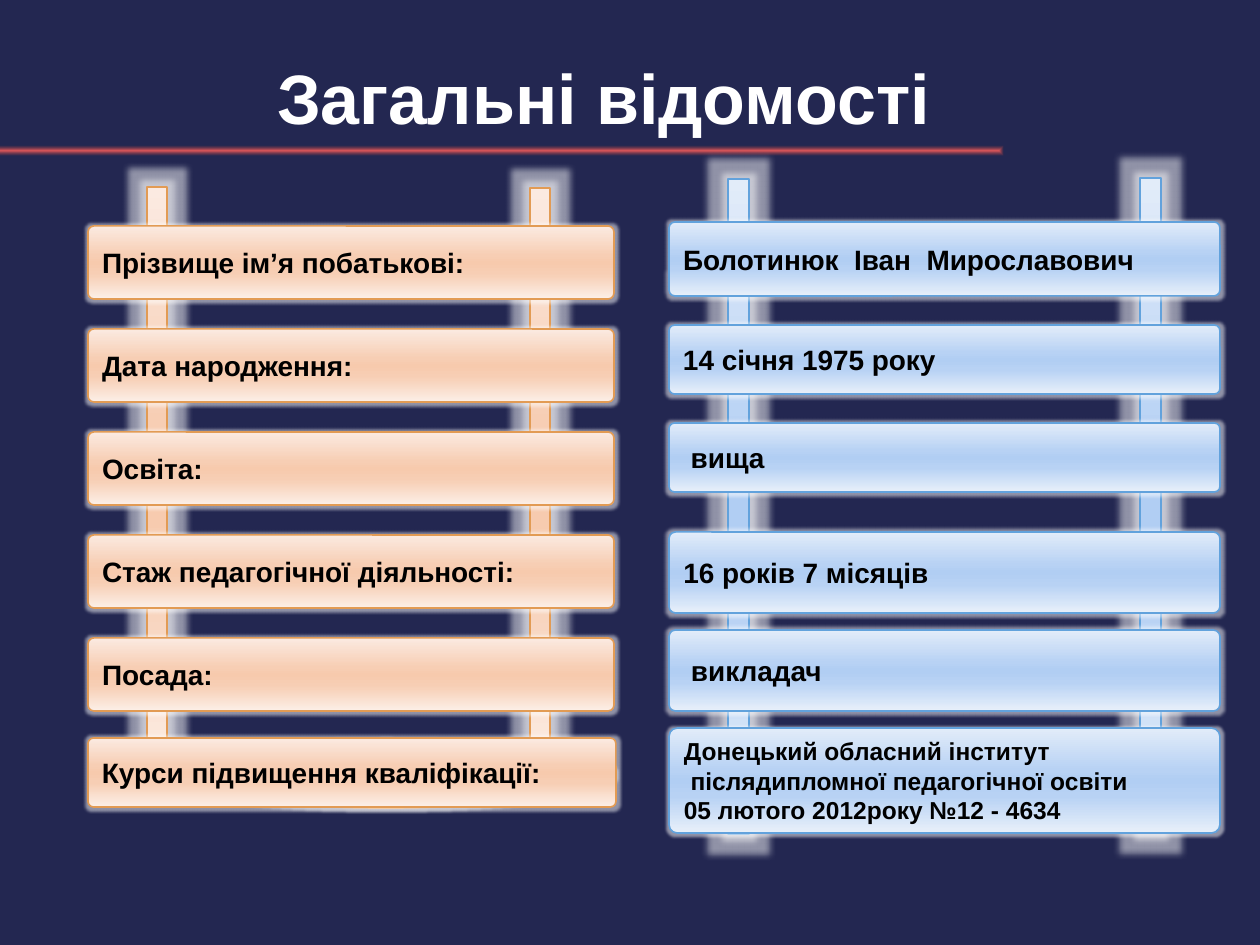
from dataclasses import dataclass

from lxml import etree
from pptx import Presentation
from pptx.dml.color import RGBColor
from pptx.enum import shapes, text
from pptx.util import Emu, Pt

NS = "http://schemas.openxmlformats.org/drawingml/2006/main"
SCALE = 914400 / 126
KIND = shapes.MSO_SHAPE


@dataclass
class Theme:
    stops: list[tuple[int, str]]
    line: str


@dataclass
class Card:
    left: int
    top: int
    width: int
    height: int
    lines: list[str]
    size: int = 16


ORANGE = Theme([(0, "FBEAE1"), (40, "F7CEB4"), (50, "F7CAAD"),
                (65, "F7CEB4"), (100, "FCEFE7")], "E29B54")
BLUE = Theme([(0, "E2ECF9"), (40, "B8D2F4"), (50, "B1CEF3"),
              (65, "B8D2F4"), (100, "E8F0FA")], "62A2DC")

LABELS = ["Прізвище ім’я побатькові:", "Дата народження:", "Освіта:",
          "Стаж педагогічної діяльності:", "Посада:"]
FACTS = [
    (222, 74, "Болотинюк  Іван  Мирославович"),
    (325, 69, "14 січня 1975 року"),
    (423, 69, " вища"),
    (532, 81, "16 років 7 місяців"),
    (630, 81, " викладач"),
]
COURSE = ["Донецький обласний інститут",
          " післядипломної педагогічної освіти",
          "05 лютого 2012року №12 - 4634"]


def px(n: int) -> Emu:
    return Emu(round(n * SCALE))


def color(code: str) -> RGBColor:
    return RGBColor.from_string(code)


def grade(shape, stops: str, way: str) -> None:
    shape._element.spPr.insert(2, etree.fromstring(
        f'<a:gradFill xmlns:a="{NS}" rotWithShape="1">'
        f'<a:gsLst>{stops}</a:gsLst>{way}</a:gradFill>'))


def glow(shape, size: int) -> None:
    node = shape._element.spPr.find(f"{{{NS}}}effectLst")
    node.append(etree.fromstring(
        f'<a:glow xmlns:a="{NS}" rad="{px(size)}"><a:srgbClr val="FFFFFF">'
        '<a:alpha val="50000"/></a:srgbClr></a:glow>'))


def block(slide, kind, box: tuple[int, int, int, int]):
    shape = slide.shapes.add_shape(kind, *map(px, box))
    shape.shadow.inherit = False
    return shape


def panel(slide, kind, box: tuple[int, int, int, int], theme: Theme, halo: int):
    shape = block(slide, kind, box)
    stops = "".join(f'<a:gs pos="{at * 1000}"><a:srgbClr val="{code}"/></a:gs>'
                    for at, code in theme.stops)
    grade(shape, stops, '<a:lin ang="5400000" scaled="0"/>')
    shape.line.color.rgb = color(theme.line)
    shape.line.width = Pt(0.94)
    glow(shape, halo)
    return shape


def write(frame, lines: list[str], size: int, code: str, align) -> None:
    frame.word_wrap = True
    frame.vertical_anchor = text.MSO_ANCHOR.MIDDLE
    frame.text = "\n".join(lines)
    for par in frame.paragraphs:
        par.alignment = align
        font = par.font
        font.name, font.size, font.bold = "Arial", Pt(size), True
        font.color.rgb = color(code)


def draw(slide, card: Card, theme: Theme) -> None:
    shape = panel(slide, KIND.ROUNDED_RECTANGLE,
                  (card.left, card.top, card.width, card.height), theme, 6)
    shape.adjustments[0] = 0.08
    write(shape.text_frame, card.lines, card.size, "000000",
          text.PP_ALIGN.LEFT)


def rule(slide) -> None:
    shape = block(slide, KIND.RECTANGLE, (-4, 146, 1008, 10))
    grade(shape,
          '<a:gs pos="0"><a:srgbClr val="DE585B"/></a:gs>'
          '<a:gs pos="100000"><a:srgbClr val="9F3F41">'
          '<a:alpha val="0"/></a:srgbClr></a:gs>',
          '<a:path path="shape"><a:fillToRect l="50000" t="50000" '
          'r="50000" b="50000"/></a:path>')
    shape.line.fill.background()


def head(slide) -> None:
    title = slide.shapes.title
    title.left, title.top, title.width, title.height = map(
        px, (63, 23, 1081, 147))
    write(title.text_frame, ["Загальні відомості"], 40, "FFFFFF",
          text.PP_ALIGN.CENTER)


def main() -> None:
    deck = Presentation()
    deck.slide_width, deck.slide_height = px(1260), px(945)
    slide = deck.slides.add_slide(deck.slide_layouts[5])
    slide.background.fill.solid()
    slide.background.fill.fore_color.rgb = color("232751")

    head(slide)
    rule(slide)
    panel(slide, KIND.OVAL, (158, 741, 456, 67), ORANGE, 6)

    for left, top in [(530, 188), (147, 187)]:
        panel(slide, KIND.RECTANGLE, (left, top, 20, 593), ORANGE, 13)
    for row, label in enumerate(LABELS):
        draw(slide, Card(88, 226 + 103 * row, 526, 73, [label]), ORANGE)

    for left, top in [(1140, 178), (728, 179)]:
        panel(slide, KIND.RECTANGLE, (left, top, 21, 655), BLUE, 13)
    for top, height, fact in FACTS:
        draw(slide, Card(669, top, 551, height, [fact]), BLUE)
    draw(slide, Card(669, 728, 551, 105, COURSE, 14), BLUE)

    draw(slide, Card(88, 738, 528, 69, ["Курси підвищення кваліфікації:"]),
         ORANGE)
    deck.save("out.pptx")


if __name__ == "__main__":
    main()
